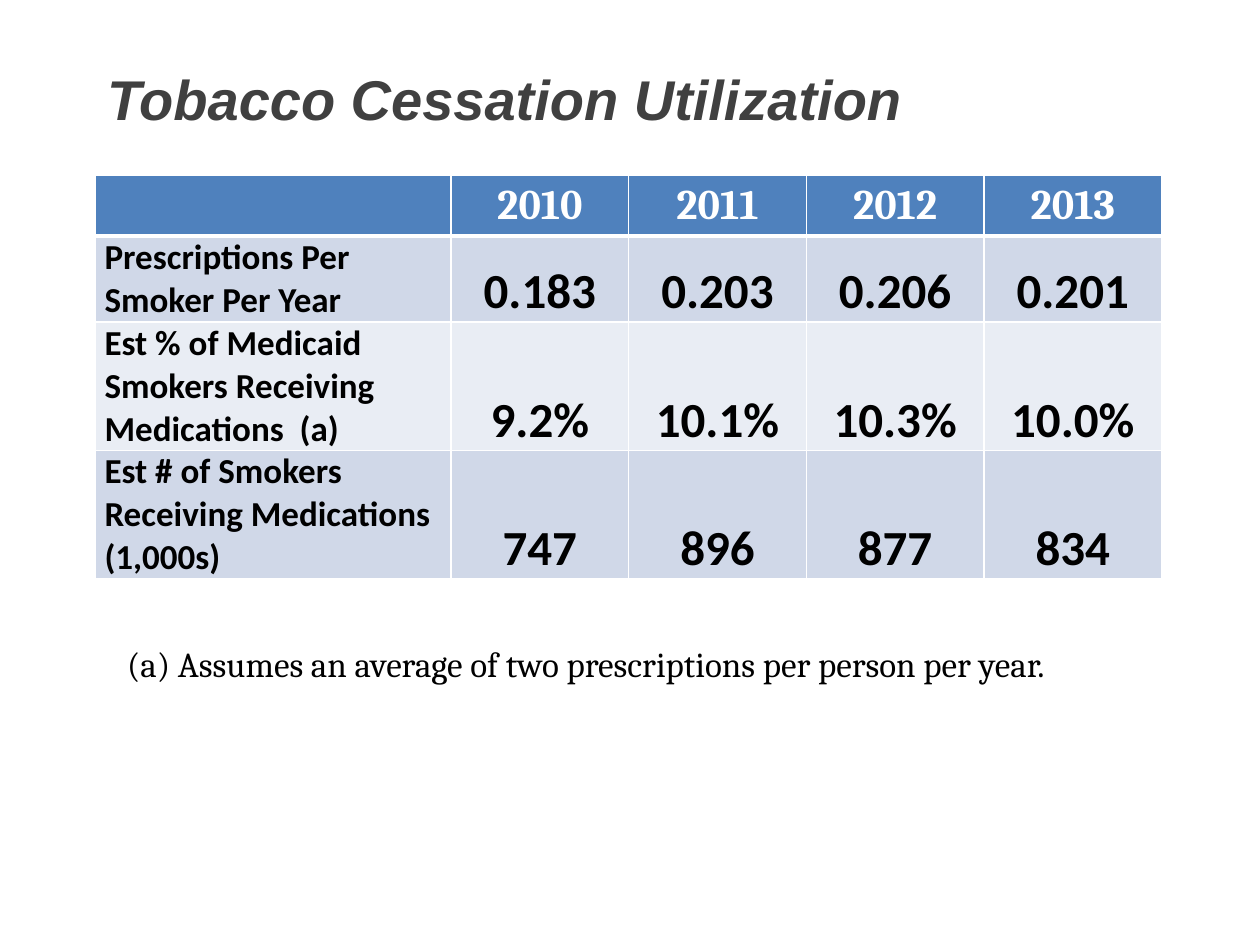
from lxml.etree import SubElement as Sub
from pptx import Presentation
from pptx.dml.color import RGBColor as RGB
from pptx.enum.text import MSO_ANCHOR as Anchor, PP_ALIGN as Align
from pptx.oxml.ns import qn
from pptx.util import Inches, Pt

HUES = {"head": "4F81BD", "odd": "D0D8E8", "even": "E9EDF4",
        "white": "FFFFFF", "black": "000000", "gray": "404040"}
TITLE = "Tobacco Cessation Utilization"
ROWS = [
    ("", "2010", "2011", "2012", "2013"),
    ("Prescriptions Per Smoker Per Year", "0.183", "0.203", "0.206", "0.201"),
    ("Est % of Medicaid Smokers Receiving Medications  (a)",
     "9.2%", "10.1%", "10.3%", "10.0%"),
    ("Est # of Smokers Receiving Medications (1,000s)",
     "747", "896", "877", "834"),
]
NOTE = "(a) Assumes an average of two prescriptions per person per year."
WIDTHS = [2.82] + [1.41] * 4
HEIGHTS = [0.47, 0.68, 1.02, 1.02]


def hue(name):
    return RGB.from_string(HUES[name])


def write(para, text, size, face, color, bold=False, slant=False):
    run = para.add_run()
    run.text = text
    font = run.font
    font.size, font.name = Pt(size), face
    font.bold, font.italic = bold, slant
    font.color.rgb = hue(color)


def edge(cell, top, base):
    props = cell._tc.get_or_add_tcPr()
    sides = {"lnL": 1, "lnR": 1, "lnT": top, "lnB": base}
    for spot, (tag, width) in enumerate(sides.items()):
        line = Sub(props, qn("a:" + tag), w=str(Pt(width)))
        fill = Sub(line, qn("a:solidFill"))
        Sub(fill, qn("a:srgbClr"), val=HUES["white"])
        props.insert(spot, line)


def style(cell, text, row, col):
    head = row == 0
    cell.fill.solid()
    cell.fill.fore_color.rgb = hue("head" if head else "odd" if row % 2 else "even")
    edge(cell, 3 if row == 1 else 1, 3 if head else 1)
    if not head:
        cell.vertical_anchor = Anchor.BOTTOM
        cell.margin_left = cell.margin_right = Inches(0.07)
        cell.margin_top = cell.margin_bottom = 0
    para = cell.text_frame.paragraphs[0]
    para.alignment = Align.CENTER if col else Align.LEFT
    if text:
        size = 24 if head else 28 if col else 20
        write(para, text, size, "Cambria" if head else "Calibri",
              "white" if head else "black", bold=True)


def main():
    deck = Presentation()
    deck.slide_width, deck.slide_height = Inches(10), Inches(7.5)
    slide = deck.slides.add_slide(deck.slide_layouts[5])

    title = slide.shapes.title
    title.left, title.top = Inches(0.75), Inches(0.41)
    title.width, title.height = Inches(8.48), Inches(0.87)
    frame = title.text_frame
    frame.vertical_anchor = Anchor.TOP
    frame.margin_top = Inches(0.1)
    para = frame.paragraphs[0]
    para.alignment = Align.LEFT
    write(para, TITLE, 32, "Arial", "gray", bold=True, slant=True)

    table = slide.shapes.add_table(
        len(ROWS), len(WIDTHS), Inches(0.76), Inches(1.39),
        Inches(sum(WIDTHS)), Inches(sum(HEIGHTS))).table
    for col, width in zip(table.columns, WIDTHS):
        col.width = Inches(width)
    for row, height in zip(table.rows, HEIGHTS):
        row.height = Inches(height)
    for row, texts in enumerate(ROWS):
        for col, text in enumerate(texts):
            style(table.cell(row, col), text, row, col)

    note = slide.shapes.add_textbox(
        Inches(0.91), Inches(5.05), Inches(8.32), Inches(0.44))
    note.text_frame.word_wrap = True
    write(note.text_frame.paragraphs[0], NOTE, 20, "Cambria", "black")

    deck.save("out.pptx")


if __name__ == "__main__":
    main()
